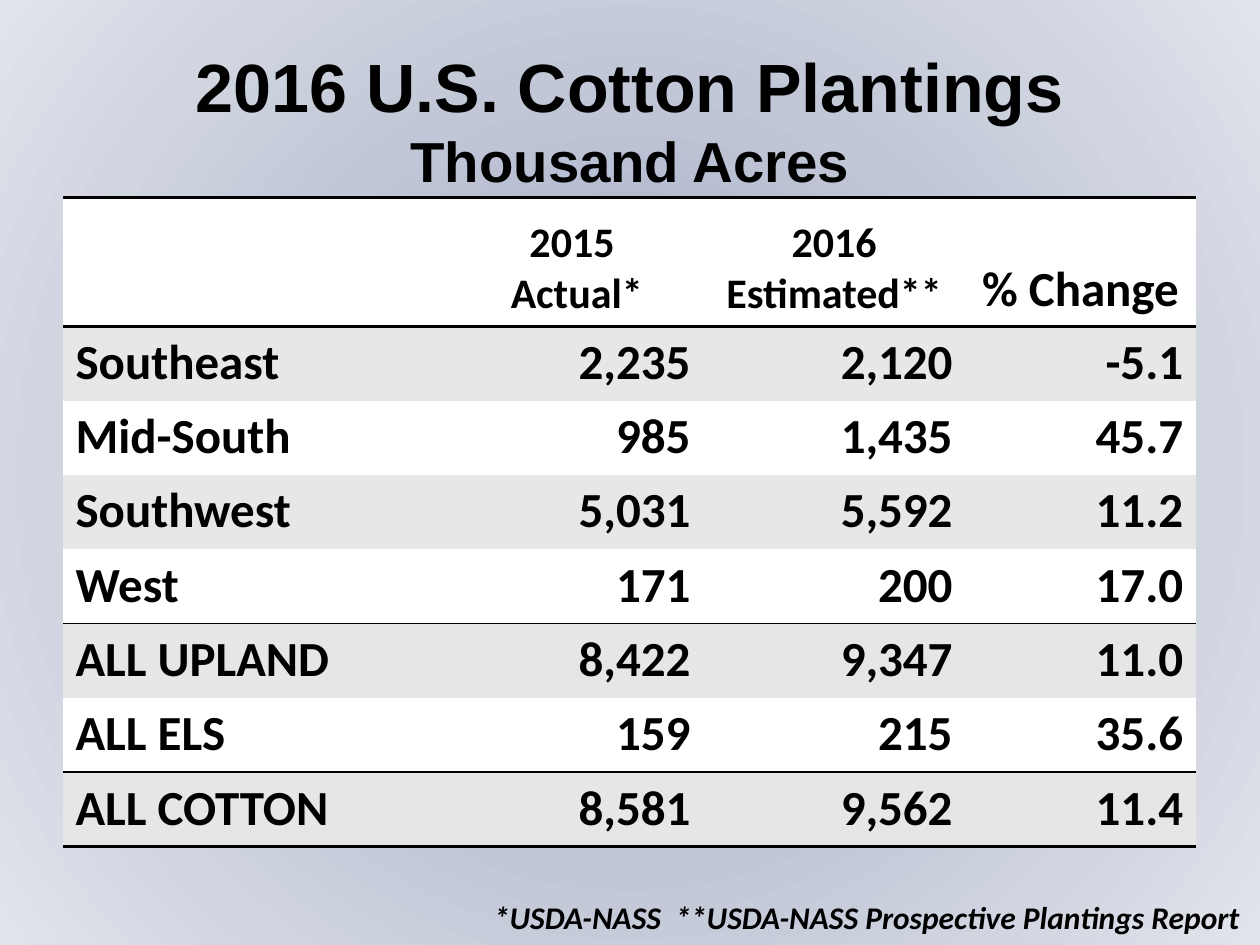
from lxml.etree import SubElement
from pptx import Presentation
from pptx.dml.color import RGBColor
from pptx.enum.text import MSO_ANCHOR, PP_ALIGN
from pptx.oxml.ns import qn
from pptx.util import Inches, Pt

LEFT, MID, RIGHT = PP_ALIGN.LEFT, PP_ALIGN.CENTER, PP_ALIGN.RIGHT
HEAD = [[], ["2015", " Actual*"], ["2016 Estimated**"], ["% Change"]]
ROWS = [
    ("Southeast", "2,235", "2,120", "-5.1"),
    ("Mid-South", "985", "1,435", "45.7"),
    ("Southwest", "5,031", "5,592", "11.2"),
    ("West", "171", "200", "17.0"),
    ("ALL UPLAND", "8,422", "9,347", "11.0"),
    ("ALL ELS", "159", "215", "35.6"),
    ("ALL COTTON", "8,581", "9,562", "11.4"),
]
RULES = {0: 2, 1: 2, 5: 1, 7: 1, 8: 2}


def color(code):
    return RGBColor.from_string(code)


class Deck:
    """Holds the style and the current slide."""

    ink, white = "000000", "FFFFFF"
    body, title = "Calibri", "Arial"

    def __init__(self, show):
        self.slide = show.slides.add_slide(show.slide_layouts[6])

    def glow(self, stops):
        self.slide.background.fill.gradient()
        grad = self.slide.element.find(".//" + qn("a:gradFill"))
        for part in list(grad):
            grad.remove(part)
        group = SubElement(grad, qn("a:gsLst"))
        for spot, code in stops:
            stop = SubElement(group, qn("a:gs"), pos=str(spot * 1000))
            SubElement(stop, qn("a:srgbClr"), val=code)
        ring = SubElement(grad, qn("a:path"), {"path": "circle"})
        SubElement(ring, qn("a:fillToRect"), dict.fromkeys("ltrb", "50000"))

    def lines(self, frame, lines, font, align, slant=False):
        for i, (text, size) in enumerate(lines):
            para = frame.add_paragraph() if i else frame.paragraphs[0]
            para.alignment = align
            run = para.add_run()
            run.text = text
            run.font.name, run.font.size = font, Pt(size)
            run.font.bold, run.font.italic = True, slant
            run.font.color.rgb = color(self.ink)

    def text(self, box, lines, font, align, slant=False, inset=0.1):
        frame = self.slide.shapes.add_textbox(*map(Inches, box)).text_frame
        frame.word_wrap = True
        frame.margin_left = Inches(inset)
        self.lines(frame, lines, font, align, slant)

    def edge(self, cell, side, width):
        line = SubElement(cell._tc.get_or_add_tcPr(), qn("a:ln" + side),
                          w=str(Pt(width)))
        if width:
            fill = SubElement(line, qn("a:solidFill"))
            SubElement(fill, qn("a:srgbClr"), val=self.ink)
        else:
            SubElement(line, qn("a:noFill"))

    def cell(self, cell, row, lines, align, fill):
        self.lines(cell.text_frame, lines, self.body, align)
        widths = (0, 0, RULES.get(row, 0), RULES.get(row + 1, 0))
        for side, width in zip("LRTB", widths):
            self.edge(cell, side, width)
        cell.fill.solid()
        cell.fill.fore_color.rgb = color(fill)

    def table(self, box, cols, tall, low):
        grid = self.slide.shapes.add_table(
            len(ROWS) + 1, len(cols), *map(Inches, box)).table
        grid.first_row = grid.horz_banding = False
        for col, width in zip(grid.columns, cols):
            col.width = Inches(width)
        for i, row in enumerate(grid.rows):
            row.height = Inches(low if i else tall)
        for j, texts in enumerate(HEAD):
            size = 28 if j == 3 else 24
            cell = grid.cell(0, j)
            self.cell(cell, 0, [(t, size) for t in texts], MID, self.white)
            cell.vertical_anchor = MSO_ANCHOR.BOTTOM
        for i, row in enumerate(ROWS, 1):
            band = "E7E7E7" if i < 5 else "E6E6E6"
            for j, text in enumerate(row):
                self.cell(grid.cell(i, j), i, [(text, 28)],
                          RIGHT if j else LEFT, band if i % 2 else self.white)


def main():
    show = Presentation()
    show.slide_width, show.slide_height = Inches(10), Inches(7.5)
    deck = Deck(show)
    deck.glow([(0, "98A3C1"), (50, "C2C7D7"), (100, "E1E4EB")])
    deck.text((0.5, 0.3, 9, 1.25),
              [("2016 U.S. Cotton Plantings", 39), ("Thousand Acres", 32.2)],
              deck.title, MID)
    deck.table((0.5, 1.57, 9, 5.17), (3, 2.08, 2.08, 1.83), 1.02, 0.59)
    deck.text((3.42, 7.08, 6.58, 0.4),
              [("*USDA-NASS  **USDA-NASS Prospective Plantings Report", 18)],
              deck.body, LEFT, True, 0.5)
    show.save("out.pptx")


if __name__ == "__main__":
    main()
